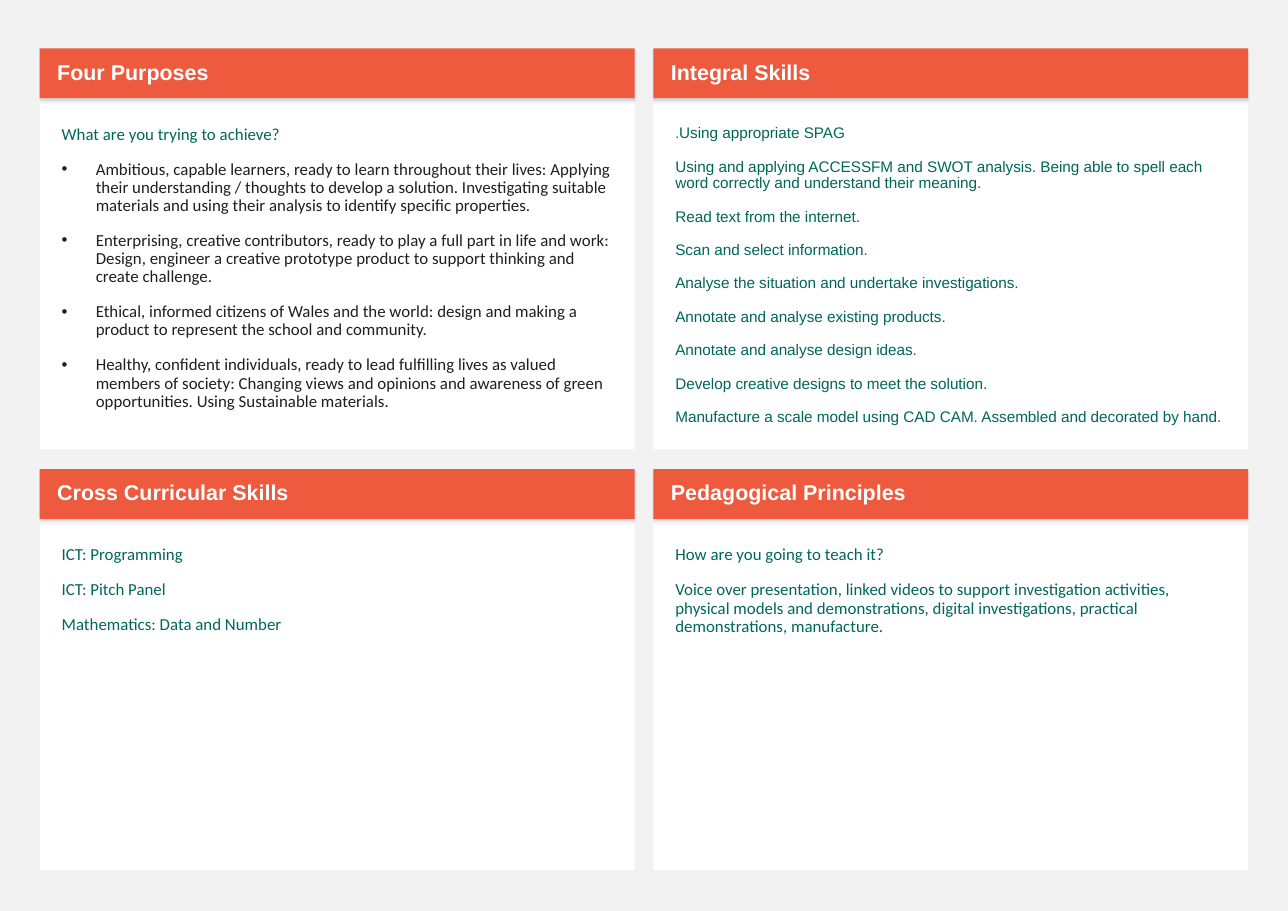
import pptx
import pptx.util
import pptx.dml.color
import pptx.enum.shapes
import pptx.enum.text
import pptx.oxml
import pptx.oxml.ns
from dataclasses import dataclass

Inches, Pt = pptx.util.Inches, pptx.util.Pt
RGB = pptx.dml.color.RGBColor.from_string
ANCHOR = pptx.enum.text.MSO_ANCHOR


@dataclass(frozen=True)
class Theme:
    page: str = "F2F2F2"
    header: str = "ED5A3E"
    panel: str = "FFFFFF"
    title: str = "FFFFFF"
    body: str = "006758"
    bullet: str = "1F1F1F"
    shadow: str = "000000"
    title_size: float = 14
    body_size: float = 11
    skills_size: float = 10
    dot_size: float = 9
    gap: float = 11


theme = Theme()


def add_box(x, y, w, h, fill, insets, anchor):
    sp = s.shapes.add_shape(pptx.enum.shapes.MSO_SHAPE.RECTANGLE,
                            Inches(x), Inches(y), Inches(w), Inches(h))
    sp.shadow.inherit = False
    sp.fill.solid()
    sp.fill.fore_color.rgb = RGB(fill)
    sp.line.fill.background()
    tf = sp.text_frame
    tf.word_wrap = True
    tf.vertical_anchor = anchor
    tf.margin_left, tf.margin_top, tf.margin_right, tf.margin_bottom = map(Inches, insets)
    return sp


def add_text(p, text, size=theme.body_size, font="Calibri", color=theme.body,
             bold=False, bullet=False):
    p.alignment = pptx.enum.text.PP_ALIGN.LEFT
    p.line_spacing = 0.9
    p.space_before = Pt(theme.gap)
    if bullet:
        pPr = p._p.get_or_add_pPr()
        pPr.set("marL", str(Inches(0.31)))
        pPr.set("indent", str(-Inches(0.31)))
        pPr.append(pptx.oxml.parse_xml(
            f'<a:buFont {pptx.oxml.ns.nsdecls("a")} typeface="Arial"/>'))
        pPr.append(pptx.oxml.parse_xml(
            f'<a:buChar {pptx.oxml.ns.nsdecls("a")} char="•"/>'))
    r = p.add_run()
    r.text = text
    r.font.size = Pt(size)
    r.font.name = font
    r.font.bold = bold
    r.font.color.rgb = RGB(color)


plain = {}
bulleted = {"color": theme.bullet, "bullet": True}
skills = {"size": theme.skills_size, "font": "Arial"}
dot = {"size": theme.dot_size, "font": "Arial"}

panels = [
    ("Four Purposes", [
        [("What are you trying to achieve?", plain)],
        [("Ambitious, capable learners, ready to learn throughout their lives: Applying their "
          "understanding / thoughts to develop a solution. Investigating suitable materials and "
          "using their analysis to identify specific properties.", bulleted)],
        [("Enterprising, creative contributors, ready to play a full part in life and work: "
          "Design, engineer a creative prototype product to support thinking and create "
          "challenge.", bulleted)],
        [("Ethical, informed citizens of Wales and the world: design and making a product to "
          "represent the school and community.", bulleted)],
        [("Healthy, confident individuals, ready to lead fulfilling lives as valued members of "
          "society: Changing views and opinions and awareness of green opportunities. Using "
          "Sustainable materials.", bulleted)],
    ]),
    ("Integral Skills", [
        [(".", dot), ("Using appropriate SPAG", skills)],
        [("Using and applying ACCESSFM and SWOT analysis. Being able to spell each word "
          "correctly and understand their meaning.", skills)],
        [("Read text from the internet.", skills)],
        [("Scan and select information.", skills)],
        [("Analyse the situation and undertake investigations.", skills)],
        [("Annotate and analyse existing products.", skills)],
        [("Annotate and analyse design ideas.", skills)],
        [("Develop creative designs to meet the solution.", skills)],
        [("Manufacture a scale model using CAD CAM. Assembled and decorated by hand.", skills)],
    ]),
    ("Cross Curricular Skills", [
        [("ICT: Programming", plain)],
        [("ICT: Pitch Panel", plain)],
        [("Mathematics: Data and Number", plain)],
    ]),
    ("Pedagogical Principles", [
        [("How are you going to teach it?", plain)],
        [("Voice over presentation, linked videos to support investigation activities, physical "
          "models and demonstrations, digital investigations, practical demonstrations, "
          "manufacture.", plain)],
    ]),
]

prs = pptx.Presentation()
prs.slide_width, prs.slide_height = Inches(11.69), Inches(8.27)
s = prs.slides.add_slide(prs.slide_layouts[6])
s.background.fill.solid()
s.background.fill.fore_color.rgb = RGB(theme.page)

for i, (title, paragraphs) in enumerate(panels):
    row, col = divmod(i, 2)
    x = 0.36 + col * 5.57
    y = 0.44 + row * 3.82

    sp = add_box(x, y + 0.5, 5.4, 3.14, theme.panel, (0.2, 0.2, 0.2, 0.2), ANCHOR.TOP)
    tf = sp.text_frame
    for n, runs in enumerate(paragraphs):
        p = tf.add_paragraph() if n else tf.paragraphs[0]
        for text, style in runs:
            add_text(p, text, **style)

    sp = add_box(x, y, 5.4, 0.45, theme.header, (0.16, 0.05, 0.1, 0.05), ANCHOR.MIDDLE)
    add_text(sp.text_frame.paragraphs[0], title, size=theme.title_size, font="Arial",
             color=theme.title, bold=True)
    effects = sp._element.spPr.find(pptx.oxml.ns.qn("a:effectLst"))
    effects.append(pptx.oxml.parse_xml(
        f'<a:outerShdw {pptx.oxml.ns.nsdecls("a")} blurRad="{Pt(1)}" dist="{Pt(1)}" '
        'dir="5400000" algn="t" rotWithShape="0">'
        f'<a:srgbClr val="{theme.shadow}"><a:alpha val="12000"/></a:srgbClr></a:outerShdw>'))

prs.save("out.pptx")
